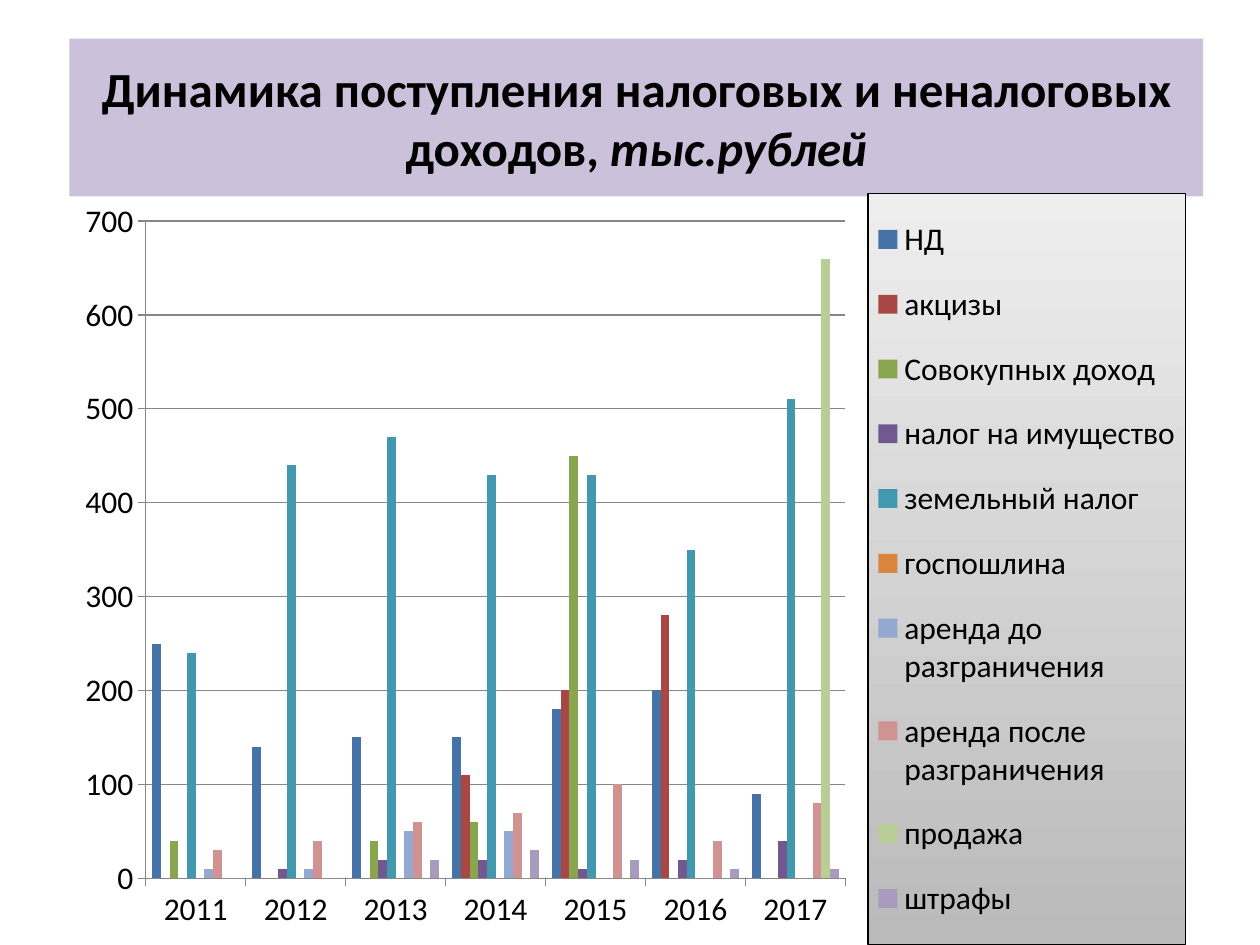
from pptx import Presentation
from pptx.chart.data import CategoryChartData
from pptx.dml.color import RGBColor
from pptx.enum.chart import XL_CHART_TYPE, XL_LEGEND_POSITION, XL_TICK_MARK
from pptx.enum.shapes import MSO_SHAPE
from pptx.enum.text import MSO_ANCHOR, PP_ALIGN
from pptx.oxml import parse_xml
from pptx.oxml.ns import nsdecls, qn
from pptx.util import Inches, Pt

BLACK = RGBColor(0x00, 0x00, 0x00)
LILAC = RGBColor(0xCC, 0xC1, 0xDA)
GRAY = RGBColor(0x86, 0x86, 0x86)
LEGEND_TOP = RGBColor(0xEE, 0xEE, 0xEE)
LEGEND_BOTTOM = RGBColor(0xBA, 0xBA, 0xBA)
FONT = "Calibri"
WIDTH, HEIGHT = Inches(10), Inches(7.5)

YEARS = [str(year) for year in range(2011, 2018)]
INCOME = [
    ("НД", RGBColor(0x45, 0x72, 0xA7), (250, 140, 150, 150, 180, 200, 90)),
    ("акцизы", RGBColor(0xAA, 0x46, 0x43), (0, 0, 0, 110, 200, 280, 0)),
    ("Совокупных доход", RGBColor(0x89, 0xA5, 0x4E), (40, 0, 40, 60, 450, 0, 0)),
    ("налог на имущество", RGBColor(0x71, 0x58, 0x8F), (0, 10, 20, 20, 10, 20, 40)),
    ("земельный налог", RGBColor(0x41, 0x98, 0xAF), (240, 440, 470, 430, 430, 350, 510)),
    ("госпошлина", RGBColor(0xDB, 0x84, 0x3D), (0, 0, 0, 0, 0, 0, 0)),
    ("аренда до разграничения", RGBColor(0x93, 0xA9, 0xCF), (10, 10, 50, 50, 0, 0, 0)),
    ("аренда после разграничения", RGBColor(0xD1, 0x93, 0x92), (30, 40, 60, 70, 100, 40, 80)),
    ("продажа", RGBColor(0xB9, 0xCD, 0x96), (0, 0, 0, 0, 0, 0, 660)),
    ("штрафы", RGBColor(0xA9, 0x9B, 0xBD), (0, 0, 20, 30, 20, 10, 10)),
]


def place(left, top, width, height):
    return int(WIDTH * left), int(HEIGHT * top), int(WIDTH * width), int(HEIGHT * height)


def style_font(font, size):
    font.name = FONT
    font.size = Pt(size)
    font.color.rgb = BLACK


def add_title(page):
    box = page.shapes.add_shape(MSO_SHAPE.RECTANGLE, *place(0.055, 0.041, 0.9, 0.167))
    box.shadow.inherit = False
    box.fill.solid()
    box.fill.fore_color.rgb = LILAC
    box.line.fill.background()
    frame = box.text_frame
    frame.word_wrap = True
    frame.vertical_anchor = MSO_ANCHOR.MIDDLE
    para = frame.paragraphs[0]
    para.alignment = PP_ALIGN.CENTER
    style_font(para.font, 28)
    para.font.bold = True
    para.add_run().text = "Динамика поступления налоговых и неналоговых доходов, "
    span = para.add_run()
    span.text = "тыс.рублей"
    span.font.italic = True


def manual_layout(left, top, width, height, inner=False):
    target = '<c:layoutTarget val="inner"/>' if inner else ""
    return parse_xml(
        f'<c:layout {nsdecls("c")}><c:manualLayout>{target}'
        '<c:xMode val="edge"/><c:yMode val="edge"/>'
        f'<c:x val="{left}"/><c:y val="{top}"/><c:w val="{width}"/><c:h val="{height}"/>'
        '</c:manualLayout></c:layout>')


def replace_layout(parent, position, layout):
    for old in parent.findall(qn("c:layout")):
        parent.remove(old)
    parent.insert(position, layout)


def style_legend(chart):
    chart.has_legend = True
    legend = chart.legend
    legend.position = XL_LEGEND_POSITION.RIGHT
    legend.include_in_layout = False
    style_font(legend.font, 18)
    element = legend._element
    replace_layout(element, 1, manual_layout(0.71, 0.01, 0.28, 0.99))
    element.find(qn("c:overlay")).addnext(parse_xml(
        f'<c:spPr {nsdecls("c", "a")}><a:gradFill><a:gsLst>'
        f'<a:gs pos="0"><a:srgbClr val="{LEGEND_TOP}"/></a:gs>'
        f'<a:gs pos="100000"><a:srgbClr val="{LEGEND_BOTTOM}"/></a:gs>'
        '</a:gsLst><a:lin ang="5400000" scaled="0"/></a:gradFill>'
        f'<a:ln w="9525"><a:solidFill><a:srgbClr val="{BLACK}"/></a:solidFill></a:ln>'
        '</c:spPr>'))


def style_axes(chart):
    value_axis = chart.value_axis
    value_axis.minimum_scale, value_axis.maximum_scale = 0, 700
    value_axis.major_unit = 100
    value_axis.has_major_gridlines = True
    value_axis.major_gridlines.format.line.color.rgb = GRAY
    for axis in (chart.category_axis, value_axis):
        axis.major_tick_mark = XL_TICK_MARK.OUTSIDE
        axis.format.line.color.rgb = GRAY


def add_income_chart(page):
    data = CategoryChartData()
    data.categories = YEARS
    for name, _, values in INCOME:
        data.add_series(name, values)
    chart = page.shapes.add_chart(
        XL_CHART_TYPE.COLUMN_CLUSTERED, *place(0.05, 0.197, 0.9, 0.803), data).chart
    chart.has_title = False
    style_font(chart.font, 18)
    plot = chart.plots[0]
    plot.vary_by_categories = False
    plot.gap_width = 150
    plot.overlap = 0
    for series, (_, color, _) in zip(plot.series, INCOME):
        series.format.fill.solid()
        series.format.fill.fore_color.rgb = color
    style_axes(chart)
    style_legend(chart)
    area = chart._chartSpace.find(qn("c:chart")).find(qn("c:plotArea"))
    replace_layout(area, 0, manual_layout(0.073, 0.046, 0.617, 0.867, inner=True))


def main():
    deck = Presentation()
    deck.slide_width, deck.slide_height = WIDTH, HEIGHT
    page = deck.slides.add_slide(deck.slide_layouts[6])
    add_title(page)
    add_income_chart(page)
    deck.save("out.pptx")


if __name__ == "__main__":
    main()
